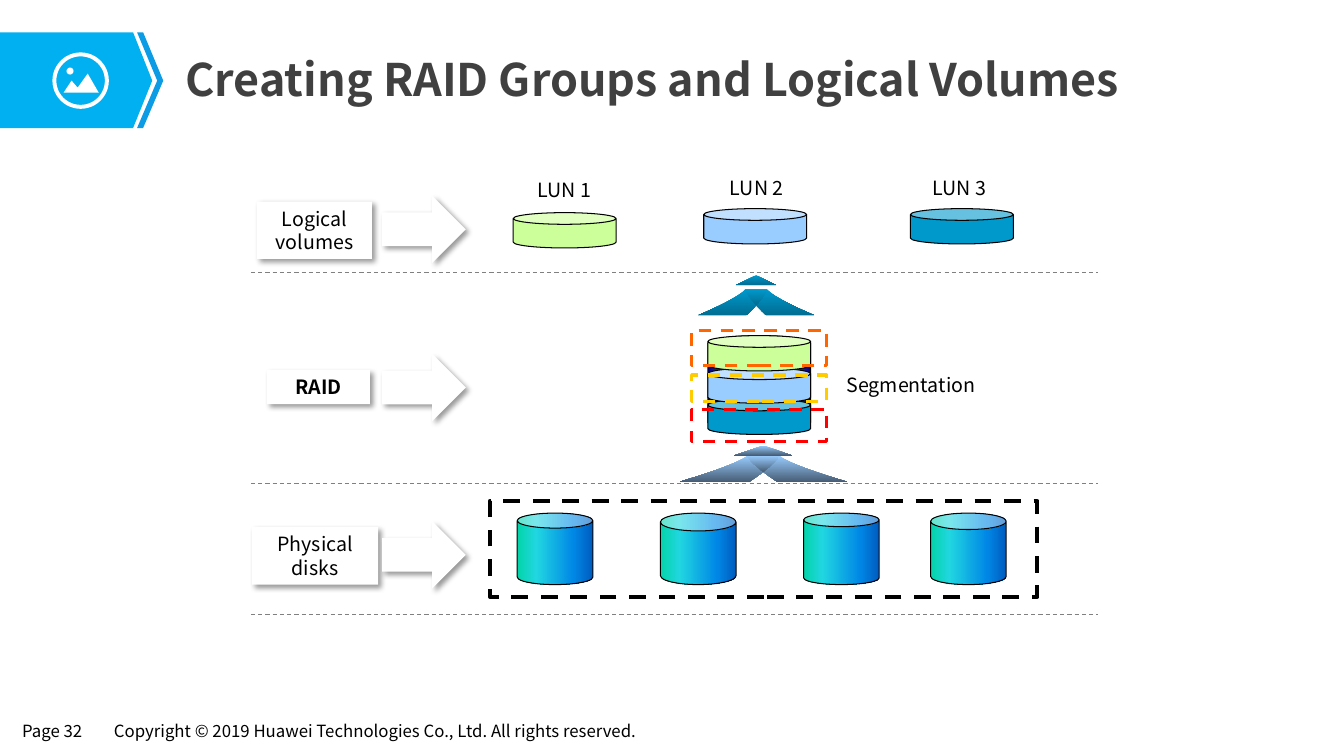
from lxml import etree
from pptx import Presentation
from pptx.dml.color import RGBColor
from pptx.enum.dml import MSO_LINE
from pptx.enum.shapes import MSO_CONNECTOR, MSO_SHAPE as SHAPE
from pptx.enum.text import MSO_ANCHOR, PP_ALIGN
from pptx.oxml.ns import qn
from pptx.util import Inches, Pt

COLORS = {
    "black": "000000", "white": "FFFFFF", "title": "404040", "rule": "808080",
    "banner": "00B0F0", "chevron": "0B9CE5",
    "green": "CCFF99", "light": "99CCFF", "teal": "0099CC",
    "slate": "475E76", "deep": "006D92", "navy": "000080", "mist": "B2B2D9",
    "mint": "03D4A8", "aqua": "21D6E0", "azure": "0087E6", "cobalt": "005CBF",
    "orange": "FF6600", "yellow": "FFCC00", "red": "FF0000",
}
DISK_STOPS = [(0, "mint"), (25, "aqua"), (75, "azure"), (100, "cobalt")]
BODY_STOPS = [(0, "navy"), (50, "mist"), (100, "navy")]


def rgb(name):
    return RGBColor.from_string(COLORS[name])


class Deck:
    """Style and current slide, with one method per kind of element."""

    font = "Noto Sans CJK SC"

    def __init__(self, prs):
        self.shapes = prs.slides.add_slide(prs.slide_layouts[6]).shapes

    def paint(self, s, fill=None, line=None, width=0.75, dash=False, angle=0):
        """Fill with a colour name or a list of gradient stops; outline if asked."""
        s.shadow.inherit = False
        if fill is None:
            s.fill.background()
        elif isinstance(fill, str):
            s.fill.solid()
            s.fill.fore_color.rgb = rgb(fill)
        else:
            s.fill.gradient()
            s.fill.gradient_angle = -angle % 360
            stops = s._element.spPr.find(".//" + qn("a:gsLst"))
            for old in list(stops):
                stops.remove(old)
            for pos, name in fill:
                gs = etree.SubElement(stops, qn("a:gs"), pos=str(pos * 1000))
                etree.SubElement(gs, qn("a:srgbClr"), val=COLORS[name])
        if line is None:
            s.line.fill.background()
        else:
            s.line.color.rgb = rgb(line)
            s.line.width = Pt(width)
            if dash:
                s.line.dash_style = MSO_LINE.DASH
        return s

    def shape(self, kind, x, y, w, h, adj=None, **style):
        s = self.shapes.add_shape(kind, Inches(x), Inches(y), Inches(w), Inches(h))
        if adj is not None:
            s.adjustments[0] = adj
        return self.paint(s, **style)

    def outline(self, points, **style):
        (x, y), *rest = [(Inches(px), Inches(py)) for px, py in points]
        builder = self.shapes.build_freeform(x, y)
        builder.add_line_segments(rest, close=True)
        return self.paint(builder.convert_to_shape(), **style)

    def raised(self, kind, x, y, w, h):
        """White shape with a soft shadow to the lower right."""
        s = self.shape(kind, x, y, w, h, fill="white")
        effects = s._element.spPr.find(qn("a:effectLst"))
        shadow = etree.SubElement(effects, qn("a:outerShdw"), blurRad=str(Pt(4)),
                                  dist=str(Pt(3)), dir="2700000", algn="tl", rotWithShape="0")
        color = etree.SubElement(shadow, qn("a:srgbClr"), val=COLORS["black"])
        etree.SubElement(color, qn("a:alpha"), val="40000")
        return s

    def label(self, s, text, size=14, color="black", bold=False, align=PP_ALIGN.LEFT):
        tf = s.text_frame
        tf.word_wrap = True
        p = tf.paragraphs[0]
        p.text = text
        p.alignment = align
        p.font.name, p.font.size, p.font.bold = self.font, Pt(size), bold
        p.font.color.rgb = rgb(color)
        return tf

    def text(self, text, x, y, w, h, **style):
        s = self.shapes.add_textbox(Inches(x), Inches(y), Inches(w), Inches(h))
        return self.label(s, text, **style)

    def rule(self, x1, x2, y):
        c = self.shapes.add_connector(MSO_CONNECTOR.STRAIGHT, Inches(x1), Inches(y),
                                      Inches(x2), Inches(y))
        c.line.color.rgb = rgb("rule")
        c.line.width = Pt(0.75)
        c.line.dash_style = MSO_LINE.DASH
        etree.SubElement(c._element.spPr, qn("a:effectLst"))

    def frame(self, x, y, w, h, color, width=2.25):
        self.shape(SHAPE.RECTANGLE, x, y, w, h, line=color, width=width, dash=True)

    def disc(self, x, y, fill):
        self.shape(SHAPE.CAN, x, y, 1.02, 0.35, adj=0.33, fill=fill, line="black")

    def flow_arrow(self, cx, tip, top, head, neck, foot, heel, colors):
        """Upward arrow: triangular head over two curved, overlapping wings."""
        height, steps = 0.26, 20
        style = {"fill": list(zip((0, 100), colors)), "angle": 90}

        def curve(start, end, until=1.0):
            ts = [until * i / steps for i in range(steps + 1)]
            return [(start + (end - start) * t ** 1.3, top + height * t) for t in ts]

        def mirror(points):
            return [(2 * cx - x, y) for x, y in points]

        right = curve(cx + neck, cx + foot) + curve(cx - neck, cx + heel)[::-1]
        crossing = (neck / (neck + heel)) ** (1 / 1.3)
        edge = curve(cx - neck, cx + heel, crossing)
        self.outline(right, **style)
        self.outline([(cx - head, tip + 0.1), (cx + head, tip + 0.1), (cx, tip)], **style)
        self.outline(mirror(right), **style)
        self.outline(edge + mirror(edge)[::-1], **style)


def draw_header(deck):
    top, mid, bottom = 0.32, 0.8, 1.27
    deck.outline([(0, top), (1.32, top), (1.51, mid), (1.32, bottom), (0, bottom)],
                 fill="banner")
    deck.outline([(1.36, top), (1.42, top), (1.62, mid), (1.42, bottom), (1.36, bottom),
                  (1.56, mid)], fill="chevron")
    deck.shape(SHAPE.DONUT, 0.52, 0.52, 0.56, 0.56, adj=0.07, fill="white")
    deck.shape(SHAPE.OVAL, 0.66, 0.67, 0.07, 0.07, fill="white")
    deck.outline([(0.63, 0.92), (0.71, 0.8), (0.77, 0.87), (0.87, 0.73), (0.98, 0.92)],
                 fill="white")
    tf = deck.text("Creating RAID Groups and Logical Volumes", 1.74, 0.45, 10.75, 0.65,
                   size=32, color="title", bold=True)
    tf.vertical_anchor = MSO_ANCHOR.MIDDLE


def draw_footer(deck):
    for text, x, w in [
        ("Page 32", 0.13, 0.84),
        ("Copyright © 2019 Huawei Technologies Co., Ltd. All rights reserved.", 1.04, 5.66),
    ]:
        tf = deck.text(text, x, 7.11, w, 0.29, size=12)
        tf.word_wrap = False
        tf.margin_left = tf.margin_right = Inches(0.09)
        tf.margin_top = tf.margin_bottom = Inches(0.04)


def draw_layers(deck):
    """Row labels, their arrows and the dashed separators."""
    for text, x, y, w, h, arrow_y in [
        ("Logical volumes", 2.55, 2.0, 1.14, 0.57, 1.94),
        ("RAID", 2.65, 3.67, 1.02, 0.34, 3.51),
        ("Physical disks", 2.5, 5.23, 1.25, 0.57, 5.17),
    ]:
        deck.label(deck.raised(SHAPE.RECTANGLE, x, y, w, h), text,
                   bold=text == "RAID", align=PP_ALIGN.CENTER)
        deck.raised(SHAPE.RIGHT_ARROW, 3.79, arrow_y, 0.83, 0.67)
    for y in (2.7, 4.8, 6.1):
        deck.rule(2.49, 10.89, y)


def draw_storage(deck):
    for text, text_x, text_y, x, y, fill in [
        ("LUN 1", 5.23, 1.72, 5.09, 2.11, "green"),
        ("LUN 2", 7.14, 1.7, 6.98, 2.07, "light"),
        ("LUN 3", 9.15, 1.7, 9.03, 2.07, "teal"),
    ]:
        deck.text(text, text_x, text_y, 0.95, 0.34)
        deck.disc(x, y, fill)

    deck.flow_arrow(7.5, 2.73, 2.87, head=0.2, neck=0.11, foot=0.58, heel=0.1,
                    colors=("teal", "deep"))
    deck.flow_arrow(7.57, 4.42, 4.52, head=0.29, neck=0.16, foot=0.83, heel=0.14,
                    colors=("light", "slate"))

    deck.shape(SHAPE.CAN, 7.02, 3.33, 1.02, 0.94, adj=0.17, fill=BODY_STOPS, line="black")
    for y, fill in [(3.96, "teal"), (3.65, "light"), (3.33, "green")]:
        deck.disc(7.02, y, fill)
    for y, h, color in [(3.28, 0.35, "orange"), (3.72, 0.26, "yellow"), (4.06, 0.32, "red")]:
        deck.frame(6.86, y, 1.34, h, color)
    deck.text("Segmentation", 8.01, 3.65, 2.05, 0.34, align=PP_ALIGN.CENTER)

    deck.frame(4.86, 4.97, 5.43, 0.95, "black", width=3)
    for x, adj in [(5.13, 0.21), (6.55, 0.25), (7.97, 0.19), (9.23, 0.23)]:
        deck.shape(SHAPE.CAN, x, 5.09, 0.75, 0.71, adj=adj, fill=DISK_STOPS, line="black")


def main():
    prs = Presentation()
    prs.slide_width, prs.slide_height = Inches(13.33), Inches(7.5)
    deck = Deck(prs)
    draw_footer(deck)
    draw_header(deck)
    draw_layers(deck)
    draw_storage(deck)
    prs.save("out.pptx")


if __name__ == "__main__":
    main()
